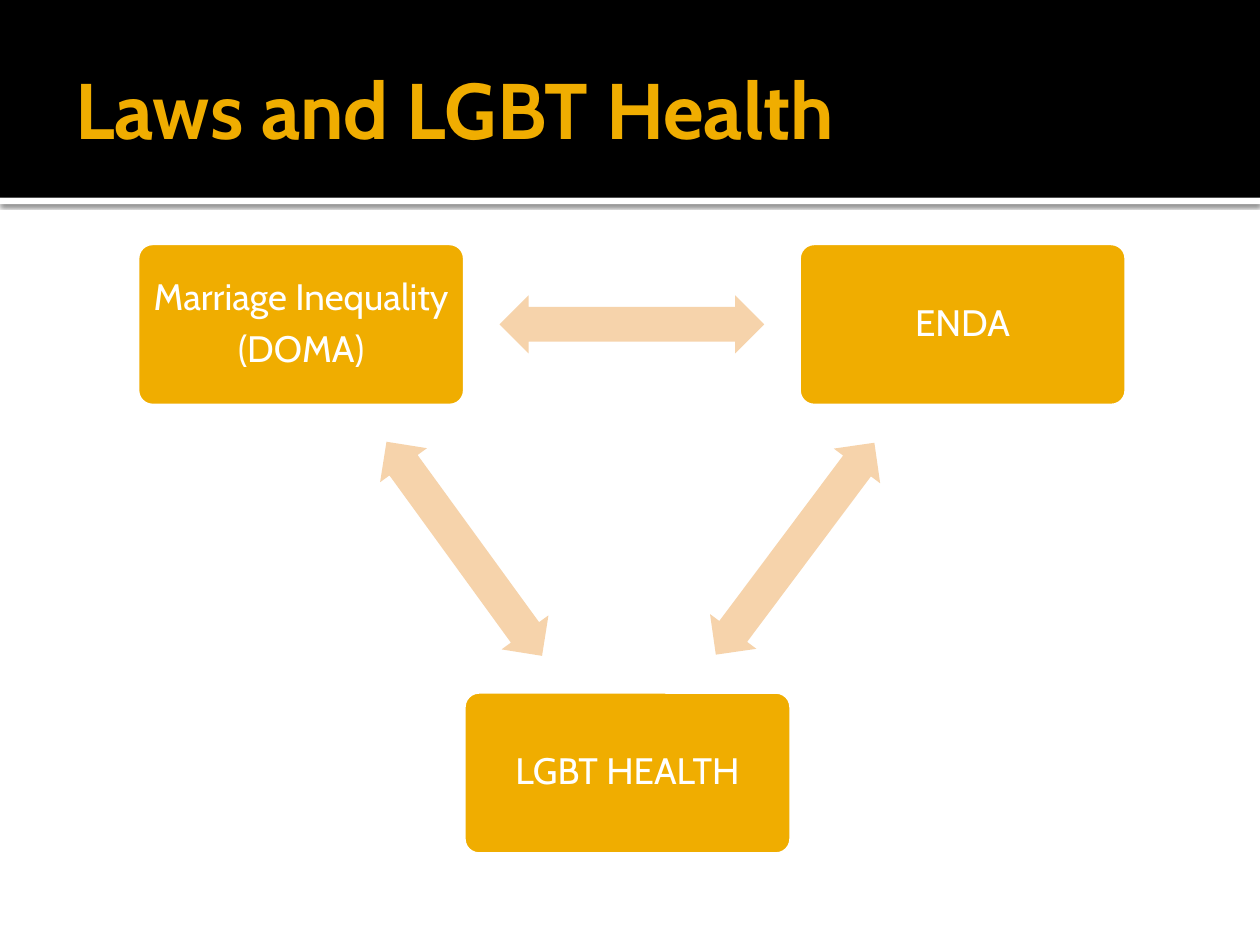
from lxml import etree
from pptx import Presentation
from pptx.dml.color import RGBColor
from pptx.enum.shapes import MSO_SHAPE
from pptx.enum.text import MSO_ANCHOR, PP_ALIGN
from pptx.oxml import parse_xml
from pptx.oxml.ns import nsdecls
from pptx.util import Inches, Pt

BLACK = RGBColor(0x00, 0x00, 0x00)
WHITE = RGBColor(0xFF, 0xFF, 0xFF)
GOLD = RGBColor(0xF0, 0xAD, 0x00)
PEACH = RGBColor(0xF6, 0xD3, 0xAB)
FONT = "Cabin"

NODE_WIDTH, NODE_HEIGHT = 2.62, 1.31
ARROW_WIDTH, ARROW_HEIGHT = 2.1, 0.46


def add_filled(page, kind, left, top, width, height, color):
    shape = page.shapes.add_shape(
        kind, Inches(left), Inches(top), Inches(width), Inches(height))
    shape.shadow.inherit = False
    shape.fill.solid()
    shape.fill.fore_color.rgb = color
    shape.line.fill.background()
    return shape


def set_insets(frame, left, top, right, bottom):
    frame.margin_left, frame.margin_top = Inches(left), Inches(top)
    frame.margin_right, frame.margin_bottom = Inches(right), Inches(bottom)


def style_font(para, size, color, bold=False):
    font = para.font
    font.name, font.size, font.bold = FONT, Pt(size), bold
    font.color.rgb = color


def add_soft_shadow(shape):
    """Replace the empty effect list with a short downward shadow."""
    properties = shape.fill._xPr
    effects = properties.find("{*}effectLst")
    shadow = parse_xml(
        f'<a:outerShdw {nsdecls("a")} blurRad="{Pt(2.5)}" dist="{Pt(0.8)}" '
        'dir="5400000" algn="tl" rotWithShape="0"/>')
    color = etree.SubElement(shadow, shadow.tag.replace("outerShdw", "srgbClr"), val="000000")
    etree.SubElement(color, shadow.tag.replace("outerShdw", "alpha"), val="60000")
    effects.append(shadow)


def add_header(page, width, height, title):
    strip = add_filled(page, MSO_SHAPE.RECTANGLE, 0, height, width, 0.05, WHITE)
    add_soft_shadow(strip)
    add_filled(page, MSO_SHAPE.RECTANGLE, 0, 0, width, height, BLACK)

    box = page.shapes.add_textbox(
        Inches(0.5), Inches(0.17), Inches(width - 1), Inches(1.37))
    frame = box.text_frame
    frame.word_wrap = True
    frame.vertical_anchor = MSO_ANCHOR.MIDDLE
    set_insets(frame, 0.1, 0.05, 0.05, 0.05)
    frame.text = title
    style_font(frame.paragraphs[0], 45, GOLD, bold=True)


def add_node(page, left, top, lines):
    node = add_filled(page, MSO_SHAPE.ROUNDED_RECTANGLE,
                      left, top, NODE_WIDTH, NODE_HEIGHT, GOLD)
    node.adjustments[0] = 0.1
    node.line.color.rgb = WHITE
    node.line.width = Pt(3.78)

    frame = node.text_frame
    frame.word_wrap = True
    frame.vertical_anchor = MSO_ANCHOR.MIDDLE
    set_insets(frame, 0.09, 0.09, 0.09, 0.09)
    frame.text = "\n".join(lines)
    for para in frame.paragraphs:
        para.alignment = PP_ALIGN.CENTER
        para.line_spacing = 0.9
        para.space_after = Pt(7.35)
        style_font(para, 21, WHITE)


def add_double_arrow(page, center_x, center_y, angle):
    arrow = add_filled(page, MSO_SHAPE.LEFT_RIGHT_ARROW,
                       center_x - ARROW_WIDTH / 2, center_y - ARROW_HEIGHT / 2,
                       ARROW_WIDTH, ARROW_HEIGHT, PEACH)
    arrow.adjustments[0] = 0.6
    arrow.adjustments[1] = 0.5
    arrow.rotation = angle


def add_triangle(page, left, top, width, height):
    """Three nodes, two above and one below, joined by double arrows."""
    right = left + width - NODE_WIDTH
    bottom = top + height - NODE_HEIGHT
    bottom_left = 3.67
    upper_y = top + NODE_HEIGHT / 2
    middle_y = top + height / 2

    add_node(page, right, top, ["ENDA"])
    add_double_arrow(page, (right + bottom_left + NODE_WIDTH) / 2, middle_y, 126.8)
    add_node(page, bottom_left, bottom, ["LGBT HEALTH"])
    add_double_arrow(page, (left + bottom_left + NODE_WIDTH) / 2, middle_y, 234)
    add_node(page, left, top, ["Marriage Inequality", "(DOMA)"])
    add_double_arrow(page, left + width / 2, upper_y, 0)


def main():
    deck = Presentation()
    deck.slide_width, deck.slide_height = Inches(10), Inches(7.5)
    page = deck.slides.add_slide(deck.slide_layouts[6])
    add_header(page, 10, 1.57, "Laws and LGBT Health")
    add_triangle(page, 1.08, 1.92, 7.87, 4.87)
    deck.save("out.pptx")


if __name__ == "__main__":
    main()
